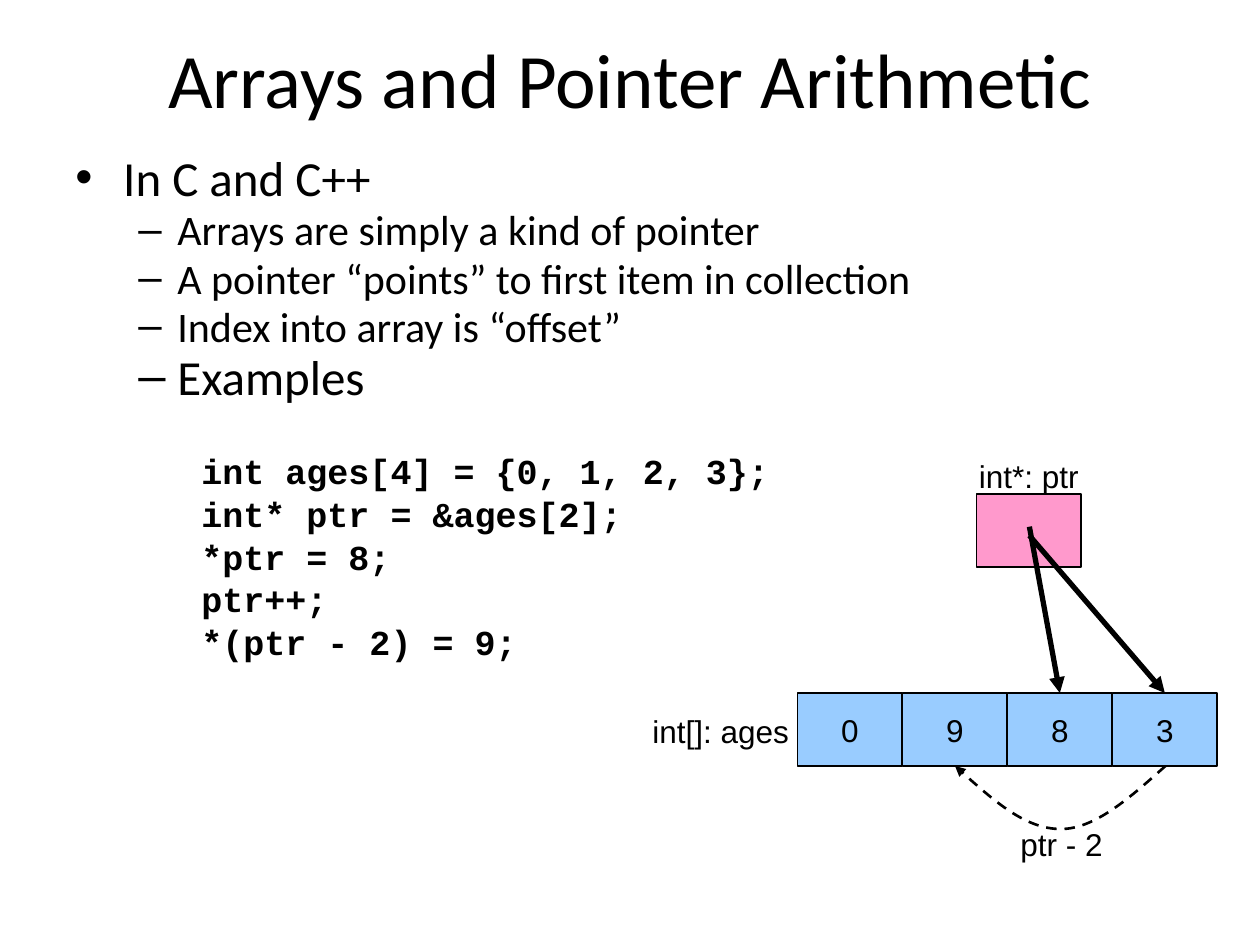
from dataclasses import dataclass

from lxml import etree
from pptx import Presentation
from pptx.dml.color import RGBColor
from pptx.enum.dml import MSO_LINE
from pptx.enum.shapes import MSO_CONNECTOR, MSO_SHAPE
from pptx.enum.text import MSO_ANCHOR, PP_ALIGN
from pptx.oxml.ns import qn
from pptx.util import Inches, Pt

CENTER, MIDDLE = PP_ALIGN.CENTER, MSO_ANCHOR.MIDDLE
RECTANGLE, STRAIGHT, DASH = MSO_SHAPE.RECTANGLE, MSO_CONNECTOR.STRAIGHT, MSO_LINE.DASH
TOP = 0
BLACK, BLUE, PINK = "000000", "99CCFF", "FF99CC"
CELL_WIDTH, CELL_HEIGHT = 0.83, 0.58
ARRAY_LEFT, ARRAY_TOP, CELL_STEP = 6.33, 5.5, 2.5 / 3


@dataclass
class Line:
    text: str
    size: float
    level: int = 0
    font: str = "Calibri"
    bold: bool = False
    space_before: float = 4.5


@dataclass
class Label:
    text: str
    left: float
    top: float
    width: float


@dataclass
class Level:
    margin: float
    indent: float
    bullet: str


LEVELS = [Level(0.38, -0.38, "•"), Level(0.81, -0.31, "–"), Level(1.25, -0.25, "")]
CODE = [
    "int ages[4] = {0, 1, 2, 3};",
    "int* ptr = &ages[2];",
    "*ptr = 8;",
    "ptr++;",
    "*(ptr - 2) = 9;",
]
LINES = [
    Line("In C and C++", 28),
    Line("Arrays are simply a kind of pointer", 24, 1),
    Line("A pointer “points” to first item in collection", 24, 1),
    Line("Index into array is “offset”", 24, 1),
    Line("Examples", 28, 1),
] + [
    # The first line of code stands apart from the bullets
    Line(text, 20, 2, "Courier New", True, 5.2 if number else 30)
    for number, text in enumerate(CODE)
]
LABELS = [
    Label("int[]: ages", 5.08, 5.6, 1.33),
    Label("int*: ptr", 7.67, 3.58, 1.08),
    Label("ptr - 2", 8, 6.5, 0.92),
]


def color(value: str) -> RGBColor:
    return RGBColor.from_string(value)


def style_font(para, name: str, size: float, bold: bool = False) -> None:
    para.font.name, para.font.size, para.font.bold = name, Pt(size), bold
    para.font.color.rgb = color(BLACK)


def style_line(line, width: float) -> None:
    line.color.rgb = color(BLACK)
    line.width = Pt(width)


def add_arrowhead(shape) -> None:
    outline = shape.line._get_or_add_ln()
    etree.SubElement(outline, qn("a:tailEnd"), type="triangle")


def format_paragraph(para, line: Line) -> None:
    level = LEVELS[line.level]
    para.text, para.level = line.text, line.level
    para.line_spacing, para.space_before = 0.8, Pt(line.space_before)
    style_font(para, line.font, line.size, line.bold)
    properties = para._p.get_or_add_pPr()
    properties.set("marL", str(Inches(level.margin)))
    properties.set("indent", str(Inches(level.indent)))
    if level.bullet:
        etree.SubElement(properties, qn("a:buFont"), typeface="Arial")
        etree.SubElement(properties, qn("a:buChar"), char=level.bullet)
    else:
        etree.SubElement(properties, qn("a:buNone"))
    # Bullets come before the default run properties in the schema
    defaults = properties.find(qn("a:defRPr"))
    if defaults is not None:
        properties.append(defaults)


def add_box(slide, left: float, top: float, fill: str, text: str = ""):
    box = slide.shapes.add_shape(
        RECTANGLE, Inches(left), Inches(top), Inches(CELL_WIDTH), Inches(CELL_HEIGHT)
    )
    box.shadow.inherit = False
    box.fill.solid()
    box.fill.fore_color.rgb = color(fill)
    style_line(box.line, 0.75)
    if text:
        frame = box.text_frame
        frame.word_wrap, frame.vertical_anchor = False, MIDDLE
        para = frame.paragraphs[0]
        para.text, para.alignment = text, CENTER
        style_font(para, "Arial", 18)
    return box


def add_label(slide, label: Label) -> None:
    box = slide.shapes.add_textbox(
        Inches(label.left), Inches(label.top), Inches(label.width), Inches(0.4)
    )
    box.text_frame.word_wrap = True
    para = box.text_frame.paragraphs[0]
    para.text = label.text
    style_font(para, "Arial", 18)


def add_pointer(slide, left: float, top: float, cell) -> None:
    arrow = slide.shapes.add_connector(
        STRAIGHT, Inches(left), Inches(top), cell.left + cell.width // 2, cell.top
    )
    arrow.end_connect(cell, TOP)
    style_line(arrow.line, 3)
    add_arrowhead(arrow)
    etree.SubElement(arrow._element.spPr, qn("a:effectLst"))


def add_curve(slide, points: list[tuple[float, float]]) -> None:
    """Draw a dashed arrow; after the start, each three points make one Bézier."""
    start, *rest = [(Inches(x), Inches(y)) for x, y in points]
    builder = slide.shapes.build_freeform(*start)
    builder.add_line_segments(rest, close=False)
    curve = builder.convert_to_shape()
    segments = list(curve._element.iter(qn("a:lnTo")))
    for first in range(0, len(segments), 3):
        bezier = etree.Element(qn("a:cubicBezTo"))
        segments[first].addprevious(bezier)
        for segment in segments[first:first + 3]:
            bezier.append(segment[0])
            segment.getparent().remove(segment)
    curve.shadow.inherit = False
    curve.fill.background()
    style_line(curve.line, 1.5)
    curve.line.dash_style = DASH
    add_arrowhead(curve)


def main() -> None:
    deck = Presentation()
    deck.slide_width, deck.slide_height = Inches(10), Inches(7.5)
    slide = deck.slides.add_slide(deck.slide_layouts[5])

    # Title
    title = slide.shapes.title
    title.left, title.top = Inches(0.5), Inches(0.23)
    title.width, title.height = Inches(9), Inches(0.77)
    title.text_frame.vertical_anchor = MIDDLE
    heading = title.text_frame.paragraphs[0]
    heading.text, heading.alignment = "Arrays and Pointer Arithmetic", CENTER
    style_font(heading, "Calibri", 44)

    # Bullets and code
    body = slide.shapes.add_textbox(Inches(0.5), Inches(1.21), Inches(9), Inches(5.49))
    frame = body.text_frame
    frame.word_wrap = True
    for number, line in enumerate(LINES):
        para = frame.add_paragraph() if number else frame.paragraphs[0]
        format_paragraph(para, line)

    # Array, pointer variable and their labels
    cells = [
        add_box(slide, ARRAY_LEFT + index * CELL_STEP, ARRAY_TOP, BLUE, value)
        for index, value in enumerate("0983")
    ]
    add_box(slide, 7.75, 3.92, PINK)
    for label in LABELS:
        add_label(slide, label)

    # Pointer before and after the increment, then the offset back
    add_pointer(slide, 8.17, 4.18, cells[2])
    add_pointer(slide, 8.17, 4.25, cells[3])
    add_curve(slide, [
        (9.25, 6.08), (8.97, 6.33), (8.69, 6.58), (8.42, 6.58),
        (8.14, 6.58), (7.86, 6.33), (7.58, 6.08),
    ])

    deck.save("out.pptx")


if __name__ == "__main__":
    main()
